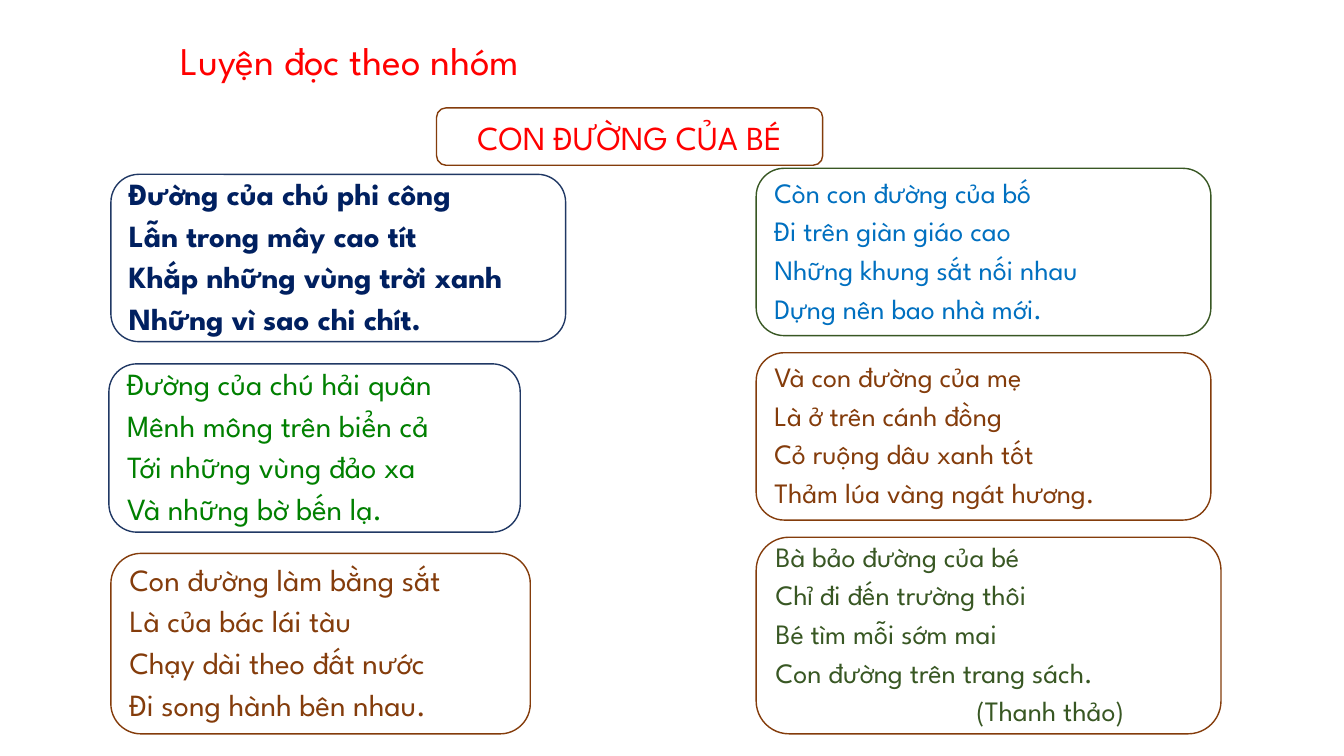
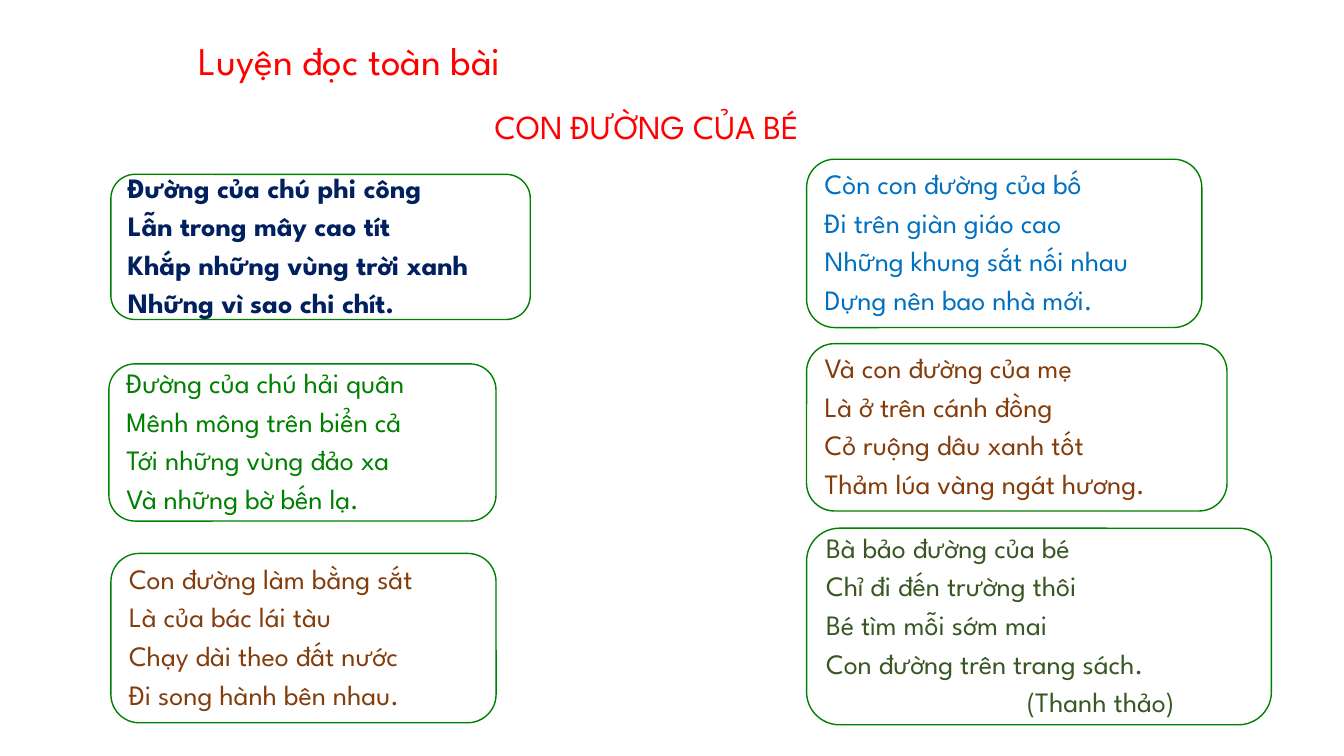
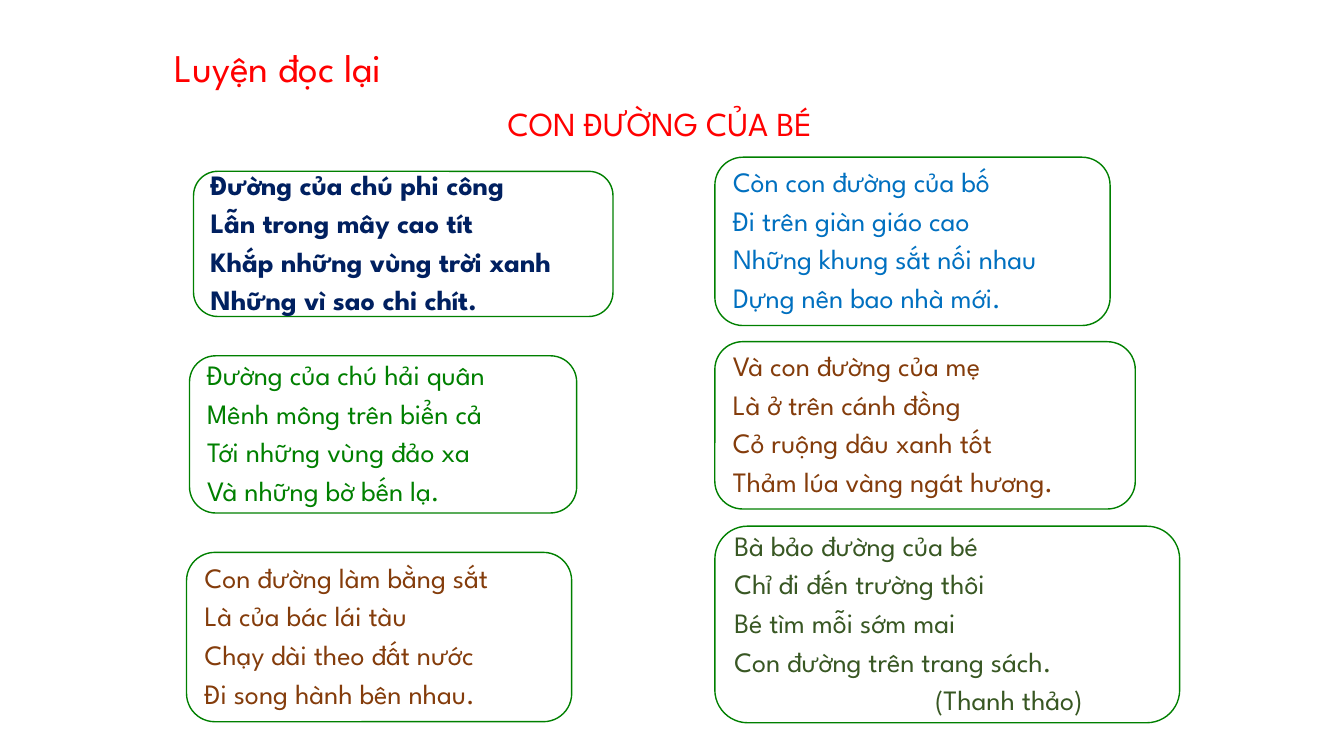
"""Build three reading-practice slides for the poem "Con đường của bé"."""
from dataclasses import dataclass

from lxml import etree
from pptx import Presentation
from pptx.dml.color import RGBColor
from pptx.enum.shapes import MSO_SHAPE
from pptx.enum.text import MSO_ANCHOR, MSO_AUTO_SIZE, PP_ALIGN
from pptx.oxml.ns import qn
from pptx.util import Pt

EMU_PER_PX = 9144
SLIDE_WIDTH, SLIDE_HEIGHT = 1333, 750
TITLE_ONLY_LAYOUT = 5
ROUNDED = MSO_SHAPE.ROUNDED_RECTANGLE
MIDDLE = MSO_ANCHOR.MIDDLE
NO_AUTOFIT = MSO_AUTO_SIZE.NONE
CENTER, LEFT = PP_ALIGN.CENTER, PP_ALIGN.LEFT


@dataclass(frozen=True)
class Theme:
    font: str = "League Spartan"
    white: str = "FFFFFF"
    red: str = "FF0000"
    navy: str = "002060"
    dark_blue: str = "203864"
    blue: str = "0070C0"
    green: str = "008000"
    olive: str = "385723"
    brown: str = "843C0B"
    title_size: int = 28
    heading_size: int = 24
    large_size: int = 22
    stanza_size: int = 20
    fill_alpha: int = 80000
    border_width: int = 1
    line_spacing: float = 0.9
    space_after: int = 6


THEME = Theme()


@dataclass(frozen=True)
class Box:
    left: int
    top: int
    width: int
    height: int


@dataclass(frozen=True)
class Stanza:
    lines: tuple[str, ...]
    color: str
    bold: bool = False
    author: str = ""


@dataclass(frozen=True)
class Page:
    title: str
    title_box: Box
    heading_box: Box
    left_boxes: tuple[Box, ...]
    right_boxes: tuple[Box, ...]
    left_size: int = THEME.stanza_size
    heading_border: str | None = None
    borders: tuple[str, ...] = (THEME.green,) * 6


HEADING = "CON ĐƯỜNG CỦA BÉ"
AUTHOR_INDENT = 199
RIGHT_PITCH = 183

STANZAS = (
    Stanza(("Đường của chú phi công", "Lẫn trong mây cao tít",
            "Khắp những vùng trời xanh", "Những vì sao chi chít."), THEME.navy, bold=True),
    Stanza(("Đường của chú hải quân", "Mênh mông trên biển cả",
            "Tới những vùng đảo xa", "Và những bờ bến lạ."), THEME.green),
    Stanza(("Con đường làm bằng sắt", "Là của bác lái tàu",
            "Chạy dài theo đất nước", "Đi song hành bên nhau."), THEME.brown),
    Stanza(("Còn con đường của bố", "Đi trên giàn giáo cao",
            "Những khung sắt nối nhau", "Dựng nên bao nhà mới."), THEME.blue),
    Stanza(("Và con đường của mẹ", "Là ở trên cánh đồng",
            "Cỏ ruộng dâu xanh tốt", "Thảm lúa vàng ngát hương."), THEME.brown),
    Stanza(("Bà bảo đường của bé", "Chỉ đi đến trường thôi",
            "Bé tìm mỗi sớm mai", "Con đường trên trang sách."), THEME.olive,
           author="(Thanh thảo)"),
)

WIDE_RIGHT = ((451, 166), (451, 166), (461, 195))
NARROW_RIGHT = ((392, 167), (417, 166), (461, 195))
NARROW_LEFT = ((416, 144), (384, 156), (382, 168))


def place(corners: tuple[tuple[int, int], ...], sizes: tuple[tuple[int, int], ...]) -> tuple[Box, ...]:
    return tuple(Box(*corner, *size) for corner, size in zip(corners, sizes))


def right_column(left: int, top: int, sizes: tuple[tuple[int, int], ...]) -> tuple[Box, ...]:
    return place(tuple((left, top + RIGHT_PITCH * row) for row in range(len(sizes))), sizes)


PAGES = (
    Page("Luyện đọc theo nhóm", Box(127, 32, 440, 54), Box(433, 107, 383, 57),
         place(((110, 173), (108, 361), (110, 549)), ((451, 166), (408, 167), (416, 179))),
         right_column(750, 167, WIDE_RIGHT),
         left_size=THEME.large_size, heading_border=THEME.brown,
         borders=(THEME.dark_blue, THEME.dark_blue, THEME.brown,
                  THEME.olive, THEME.brown, THEME.brown)),
    Page("Luyện đọc toàn bài", Box(127, 32, 440, 54), Box(450, 97, 383, 57),
         place(((110, 173), (108, 361), (110, 549)), NARROW_LEFT),
         right_column(800, 158, NARROW_RIGHT)),
    Page("Luyện đọc lại", Box(127, 39, 298, 54), Box(463, 94, 383, 57),
         place(((192, 170), (188, 353), (185, 548)), NARROW_LEFT),
         right_column(709, 156, NARROW_RIGHT)),
)


def px(value: int) -> int:
    return value * EMU_PER_PX


def set_font(paragraph, size: int, color: str, bold: bool = False) -> None:
    font = paragraph.font
    font.name = THEME.font
    font.size = Pt(size)
    font.bold = bold
    font.color.rgb = RGBColor.from_string(color)


def add_panel(slide, box: Box, border: str | None):
    shape = slide.shapes.add_shape(
        ROUNDED, px(box.left), px(box.top), px(box.width), px(box.height))
    shape.shadow.inherit = False
    shape.fill.solid()
    shape.fill.fore_color.rgb = RGBColor.from_string(THEME.white)
    color = shape.fill._xPr.find(f".//{qn('a:srgbClr')}")
    etree.SubElement(color, qn("a:alpha")).set("val", str(THEME.fill_alpha))
    if border is None:
        shape.line.fill.background()
    else:
        shape.line.color.rgb = RGBColor.from_string(border)
        shape.line.width = Pt(THEME.border_width)
    shape.text_frame.word_wrap = True
    shape.text_frame.vertical_anchor = MIDDLE
    return shape


def add_title(slide, text: str, box: Box) -> None:
    title = slide.shapes.title
    title.left, title.top = px(box.left), px(box.top)
    title.width, title.height = px(box.width), px(box.height)
    frame = title.text_frame
    frame.text = text
    frame.auto_size = NO_AUTOFIT
    frame.vertical_anchor = MIDDLE
    frame.paragraphs[0].alignment = CENTER
    set_font(frame.paragraphs[0], THEME.title_size, THEME.red)


def add_heading(slide, box: Box, border: str | None) -> None:
    frame = add_panel(slide, box, border).text_frame
    frame.text = HEADING
    frame.paragraphs[0].alignment = CENTER
    set_font(frame.paragraphs[0], THEME.heading_size, THEME.red)


def add_stanza(slide, stanza: Stanza, box: Box, border: str, size: int) -> None:
    frame = add_panel(slide, box, border).text_frame
    lines = stanza.lines + ((stanza.author,) if stanza.author else ())
    frame.text = "\n".join(lines)
    for paragraph in frame.paragraphs:
        paragraph.alignment = LEFT
        paragraph.line_spacing = THEME.line_spacing
        paragraph.space_after = Pt(THEME.space_after)
        set_font(paragraph, size, stanza.color, stanza.bold)
    if stanza.author:
        properties = frame.paragraphs[-1]._p.get_or_add_pPr()
        properties.set("marL", str(px(AUTHOR_INDENT)))


def add_page(presentation, page: Page) -> None:
    slide = presentation.slides.add_slide(presentation.slide_layouts[TITLE_ONLY_LAYOUT])
    add_title(slide, page.title, page.title_box)
    add_heading(slide, page.heading_box, page.heading_border)
    boxes = page.left_boxes + page.right_boxes
    sizes = (page.left_size,) * len(page.left_boxes) + (THEME.stanza_size,) * len(page.right_boxes)
    for stanza, box, border, size in zip(STANZAS, boxes, page.borders, sizes):
        add_stanza(slide, stanza, box, border, size)


def main() -> None:
    presentation = Presentation()
    presentation.slide_width = px(SLIDE_WIDTH)
    presentation.slide_height = px(SLIDE_HEIGHT)
    for page in PAGES:
        add_page(presentation, page)
    presentation.save("out.pptx")


if __name__ == "__main__":
    main()
